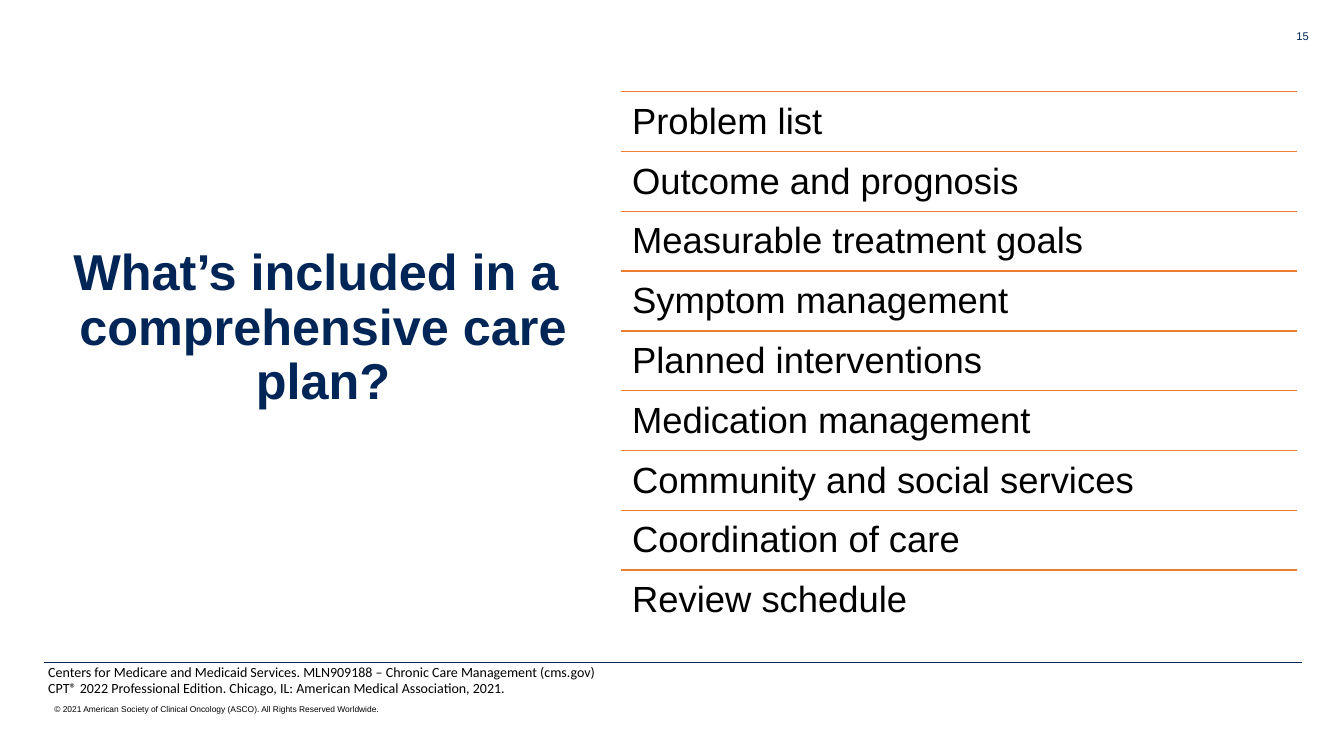
"""Build the slide listing what a comprehensive care plan includes."""
import pptx
import pptx.dml.color
import pptx.enum.shapes
import pptx.enum.text
import pptx.oxml
import pptx.util

Inches, Pt = pptx.util.Inches, pptx.util.Pt
RGBColor = pptx.dml.color.RGBColor
ALIGN, ANCHOR = pptx.enum.text.PP_ALIGN, pptx.enum.text.MSO_ANCHOR

TITLE = "What’s included in a \vcomprehensive care plan?"
ITEMS = [
    "Problem list",
    "Outcome and prognosis",
    "Measurable treatment goals",
    "Symptom management",
    "Planned interventions",
    "Medication management",
    "Community and social services",
    "Coordination of care",
    "Review schedule",
]
SOURCES = [
    "Centers for Medicare and Medicaid Services. MLN909188 – Chronic Care Management (cms.gov)",
    "CPT® 2022 Professional Edition. Chicago, IL: American Medical Association, 2021.",
]
RIGHTS = "© 2021 American Society of Clinical Oncology (ASCO). All Rights Reserved Worldwide."
NUMBER = "15"

NAVY = RGBColor(0x00, 0x25, 0x57)
ORANGE = RGBColor(0xED, 0x7D, 0x31)
BLACK = RGBColor(0x00, 0x00, 0x00)

LEFT, TOP, WIDTH, BOTTOM = 6.16, 0.91, 6.7, 6.25
STEP = (BOTTOM - TOP) / len(ITEMS)

deck = pptx.Presentation()
deck.slide_width, deck.slide_height = Inches(13.33), Inches(7.5)
slide = deck.slides.add_slide(deck.slide_layouts[6])


def add_text(*lines, at, size, face="Arial", color=BLACK, bold=False,
             align=ALIGN.LEFT, anchor=ANCHOR.TOP, pad=None, spacing=None):
    box = slide.shapes.add_textbox(*map(Inches, at))
    frame = box.text_frame
    frame.word_wrap = True
    frame.vertical_anchor = anchor
    if pad is not None:
        frame.margin_left = frame.margin_right = Inches(pad)
        frame.margin_top = frame.margin_bottom = Inches(pad)
    frame.text = "\n".join(lines)
    for para in frame.paragraphs:
        para.alignment = align
        para.line_spacing = spacing
        for run in para.runs:
            run.font.name, run.font.size = face, Pt(size)
            run.font.bold, run.font.color.rgb = bold, color


def add_rule(left, right, y, color, weight):
    rule = slide.shapes.add_connector(
        pptx.enum.shapes.MSO_CONNECTOR.STRAIGHT,
        Inches(left), Inches(y), Inches(right), Inches(y))
    rule.line.color.rgb, rule.line.width = color, Pt(weight)
    rule.element.spPr.append(pptx.oxml.parse_xml(
        '<a:effectLst xmlns:a="http://schemas.openxmlformats.org/drawingml/2006/main"/>'))


add_rule(0.44, 12.91, 6.57, NAVY, 0.25)
add_text(TITLE, at=(0.48, 1.85, 5.45, 2.83), size=36, color=NAVY, bold=True,
         align=ALIGN.CENTER, anchor=ANCHOR.MIDDLE, spacing=0.9)
add_text(RIGHTS, at=(0.44, 6.84, 4.5, 0.4), size=6, anchor=ANCHOR.MIDDLE)
add_text(NUMBER, at=(12.14, 0.24, 0.94, 0.4), size=8, color=NAVY, align=ALIGN.RIGHT)

for row, item in enumerate(ITEMS):
    y = TOP + row * STEP
    add_rule(LEFT, LEFT + WIDTH, y, ORANGE, 1)
    add_text(item, at=(LEFT, y, WIDTH, STEP), size=26, pad=0.11, spacing=0.9)

add_text(*SOURCES, at=(0.38, 6.53, 6.29, 0.44), size=10, face="Calibri")

deck.save("out.pptx")
